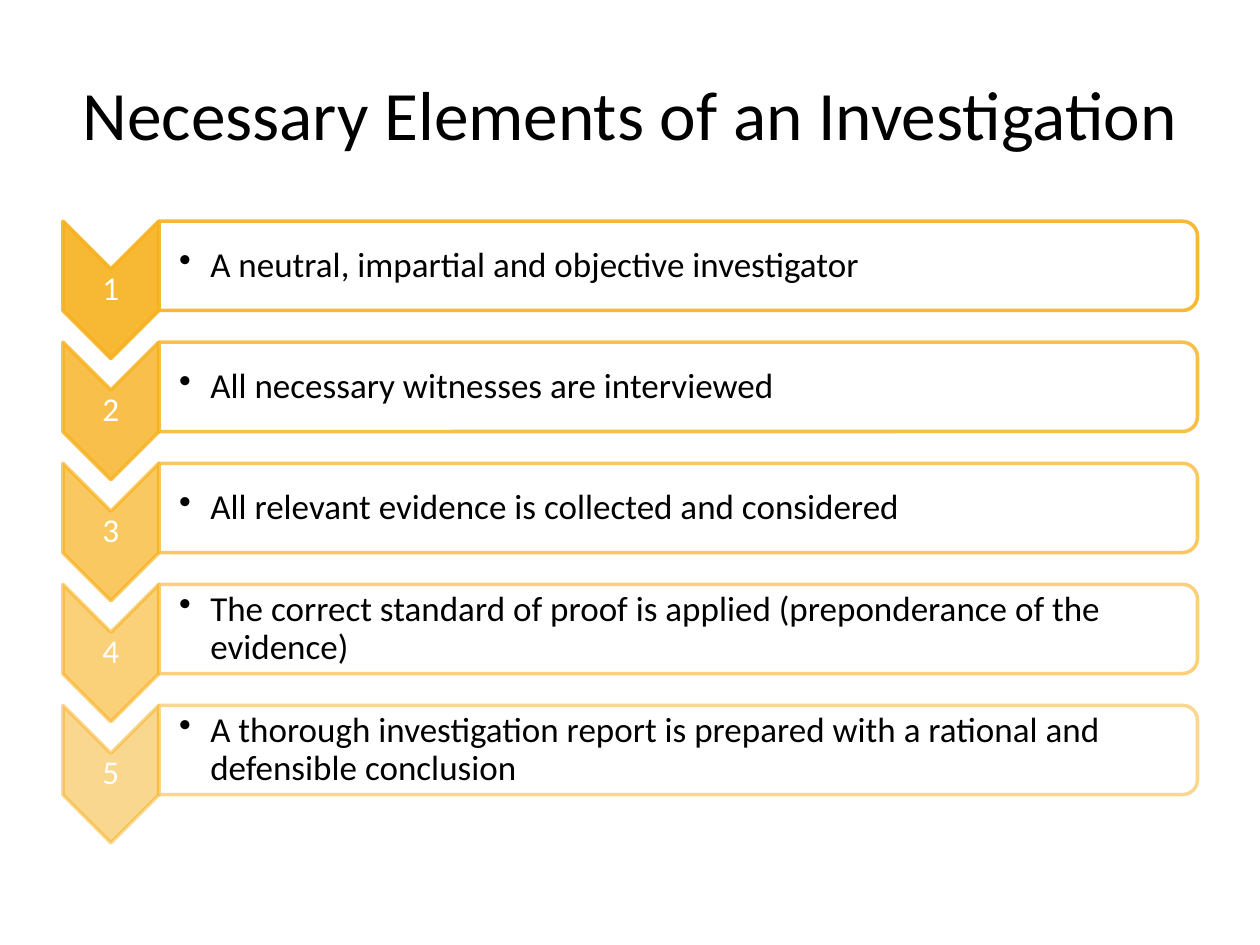
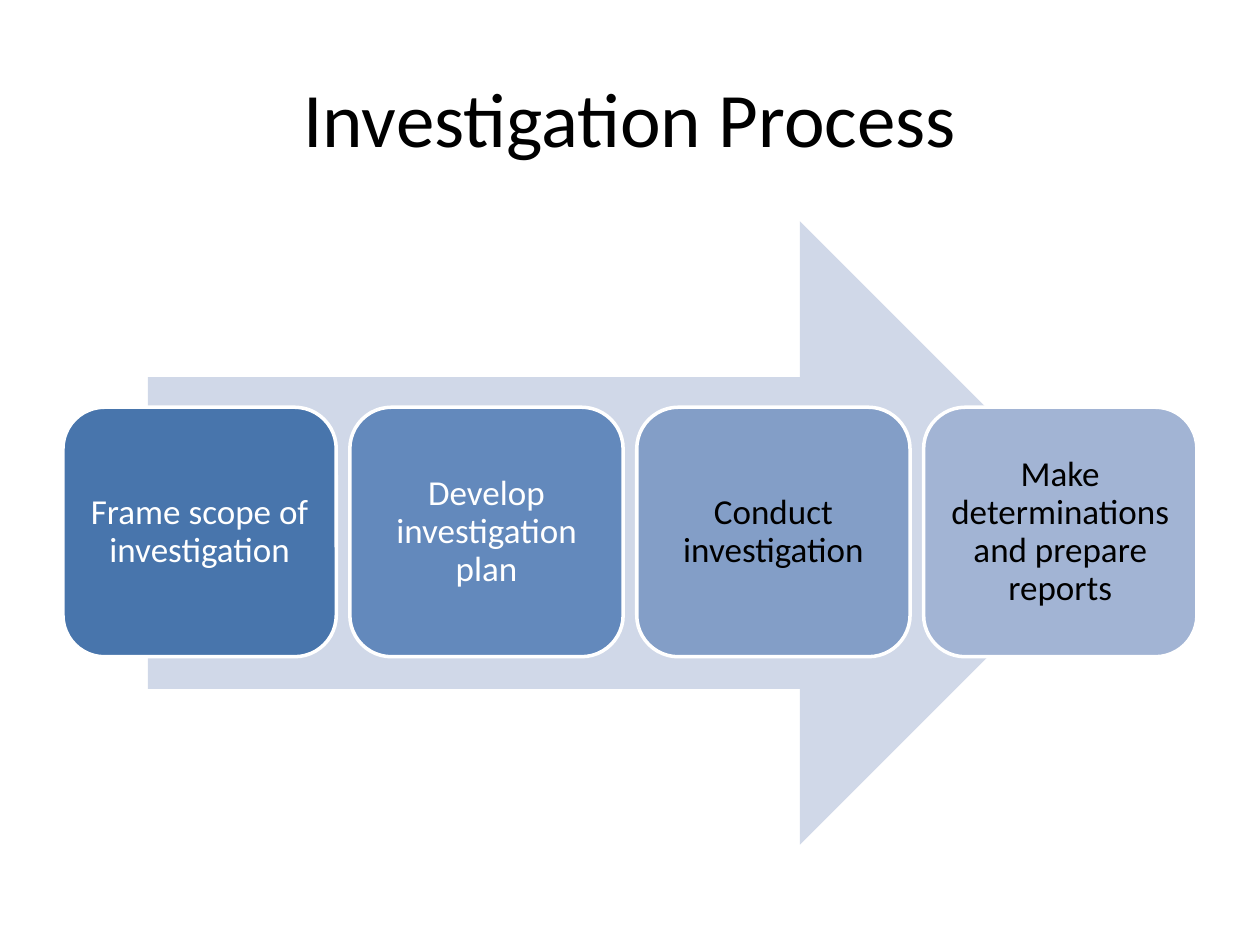
from dataclasses import dataclass

from lxml.etree import SubElement
from pptx import Presentation
from pptx.dml.color import RGBColor
from pptx.enum.shapes import MSO_SHAPE
from pptx.enum.text import MSO_ANCHOR, MSO_AUTO_SIZE, PP_ALIGN
from pptx.oxml.ns import qn
from pptx.presentation import Presentation as PresentationType
from pptx.shapes.autoshape import Shape
from pptx.slide import Slide
from pptx.util import Cm, Pt

FONT = "Calibri"
BLACK = RGBColor(0x00, 0x00, 0x00)
WHITE = RGBColor(0xFF, 0xFF, 0xFF)
GOLD = RGBColor(0xF7, 0xB1, 0x1E)
PALE_BLUE = RGBColor(0xD0, 0xD8, 0xE8)

# All measures below are in centimetres.
MARGIN = 1.27
CONTENT_WIDTH = 22.86
CONTENT_TOP = 4.46

ELEMENT_PITCH = 2.44
CHEVRON_WIDTH, CHEVRON_HEIGHT = 1.93, 2.77
BAR_LEFT, BAR_WIDTH, BAR_HEIGHT = 3.21, 20.93, 1.8

STEP_WIDTH, STEP_HEIGHT, STEP_TOP = 5.51, 5.03, 8.21


@dataclass(frozen=True)
class Box:
    left: float
    top: float
    width: float
    height: float

    def lengths(self) -> tuple[Cm, Cm, Cm, Cm]:
        return Cm(self.left), Cm(self.top), Cm(self.width), Cm(self.height)

    def quarter_turned(self) -> "Box":
        """Box with the same centre whose sides are swapped."""
        shift = (self.width - self.height) / 2
        return Box(self.left + shift, self.top - shift, self.height, self.width)


@dataclass(frozen=True)
class Step:
    label: str
    fill: RGBColor
    text_color: RGBColor


ELEMENTS = (
    "A neutral, impartial and objective investigator",
    "All necessary witnesses are interviewed",
    "All relevant evidence is collected and considered",
    "The correct standard of proof is applied (preponderance of the evidence)",
    "A thorough investigation report is prepared with a rational and defensible conclusion",
)

STEPS = (
    Step("Frame scope of investigation", RGBColor(0x48, 0x75, 0xAC), WHITE),
    Step("Develop investigation plan", RGBColor(0x63, 0x89, 0xBC), WHITE),
    Step("Conduct investigation", RGBColor(0x83, 0x9E, 0xC7), BLACK),
    Step("Make determinations and prepare reports", RGBColor(0xA2, 0xB4, 0xD4), BLACK),
)


def write_text(shape: Shape, text: str, size: float, color: RGBColor, inset: float,
               left_inset: float | None = None, bulleted: bool = False) -> None:
    frame = shape.text_frame
    frame.word_wrap = True
    frame.vertical_anchor = MSO_ANCHOR.MIDDLE
    frame.margin_top = frame.margin_bottom = frame.margin_right = Cm(inset)
    frame.margin_left = Cm(inset if left_inset is None else left_inset)
    paragraph = frame.paragraphs[0]
    paragraph.text = text
    paragraph.alignment = PP_ALIGN.LEFT if bulleted else PP_ALIGN.CENTER
    paragraph.line_spacing = 0.9
    if bulleted:
        properties = paragraph._p.get_or_add_pPr()
        properties.set("marL", str(Cm(0.63)))
        properties.set("indent", str(Cm(-0.63)))
        SubElement(properties, qn("a:buChar")).set("char", "•")
    paragraph.font.name = FONT
    paragraph.font.size = Pt(size)
    paragraph.font.color.rgb = color


def set_opacity(shape: Shape, fill: int, line: int) -> None:
    """Apply opacities, in percent, to a solid fill and a solid line."""
    properties = shape.element.spPr
    for color_location, percent in (("a:solidFill", fill), ("a:ln/a:solidFill", line)):
        solid_fill = properties.find("/".join(qn(tag) for tag in color_location.split("/")))
        SubElement(solid_fill[0], qn("a:alpha")).set("val", str(percent * 1000))


def add_block(slide: Slide, kind: MSO_SHAPE, box: Box, fill: RGBColor,
              line: RGBColor | None = None) -> Shape:
    shape = slide.shapes.add_shape(kind, *box.lengths())
    shape.shadow.inherit = False
    shape.fill.solid()
    shape.fill.fore_color.rgb = fill
    if line is None:
        shape.line.fill.background()
    else:
        shape.line.color.rgb = line
        shape.line.width = Pt(2)
    return shape


def add_turned_block(slide: Slide, kind: MSO_SHAPE, box: Box, fill: RGBColor,
                     fill_opacity: int, line_opacity: int) -> None:
    """Add a gold-edged shape turned clockwise by 90° that covers the box."""
    shape = add_block(slide, kind, box.quarter_turned(), fill, GOLD)
    shape.rotation = 90
    set_opacity(shape, fill_opacity, line_opacity)


def add_titled_slide(presentation: PresentationType, text: str, top: float, size: float) -> Slide:
    slide = presentation.slides.add_slide(presentation.slide_layouts.get_by_name("Title Only"))
    title = slide.shapes.title
    title.left, title.top, title.width, title.height = Box(MARGIN, top, CONTENT_WIDTH, 3.18).lengths()
    frame = title.text_frame
    frame.text = text
    frame.auto_size = MSO_AUTO_SIZE.NONE
    frame.vertical_anchor = MSO_ANCHOR.MIDDLE
    paragraph = frame.paragraphs[0]
    paragraph.alignment = PP_ALIGN.CENTER
    paragraph.font.name = FONT
    paragraph.font.size = Pt(size)
    paragraph.font.color.rgb = BLACK
    return slide


def add_element(slide: Slide, index: int, text: str) -> None:
    """Add a numbered chevron and the bar beside it."""
    top = CONTENT_TOP + index * ELEMENT_PITCH
    opacity = 90 - 10 * index
    add_turned_block(slide, MSO_SHAPE.CHEVRON, Box(MARGIN, top, CHEVRON_WIDTH, CHEVRON_HEIGHT),
                     GOLD, opacity, opacity)
    number = slide.shapes.add_textbox(*Box(MARGIN, top + 0.96, CHEVRON_WIDTH, 0.84).lengths())
    write_text(number, str(index + 1), 19, WHITE, inset=0.03)

    add_turned_block(slide, MSO_SHAPE.ROUND_2_SAME_RECTANGLE,
                     Box(BAR_LEFT, top, BAR_WIDTH, BAR_HEIGHT), WHITE, 90, opacity)
    description = slide.shapes.add_textbox(*Box(BAR_LEFT, top + 0.09, 20.83, 1.63).lengths())
    write_text(description, text, 20, BLACK, inset=0.03, left_inset=0.4, bulleted=True)


def build_elements_slide(presentation: PresentationType) -> None:
    slide = add_titled_slide(presentation, "Necessary Elements of an Investigation", 0.69, 39.6)
    for index, text in enumerate(ELEMENTS):
        add_element(slide, index, text)


def build_process_slide(presentation: PresentationType) -> None:
    slide = add_titled_slide(presentation, "Investigation Process", 0.76, 44)
    add_block(slide, MSO_SHAPE.RIGHT_ARROW, Box(2.98, CONTENT_TOP, 19.43, 12.57), PALE_BLUE)
    pitch = (CONTENT_WIDTH - STEP_WIDTH) / (len(STEPS) - 1)
    for index, step in enumerate(STEPS):
        box = Box(MARGIN + index * pitch, STEP_TOP, STEP_WIDTH, STEP_HEIGHT)
        shape = add_block(slide, MSO_SHAPE.ROUNDED_RECTANGLE, box, step.fill, WHITE)
        write_text(shape, step.label, 20, step.text_color, inset=0.2)


def main() -> None:
    presentation = Presentation()
    presentation.slide_width, presentation.slide_height = Cm(25.4), Cm(19.05)
    build_elements_slide(presentation)
    build_process_slide(presentation)
    presentation.save("out.pptx")


if __name__ == "__main__":
    main()
